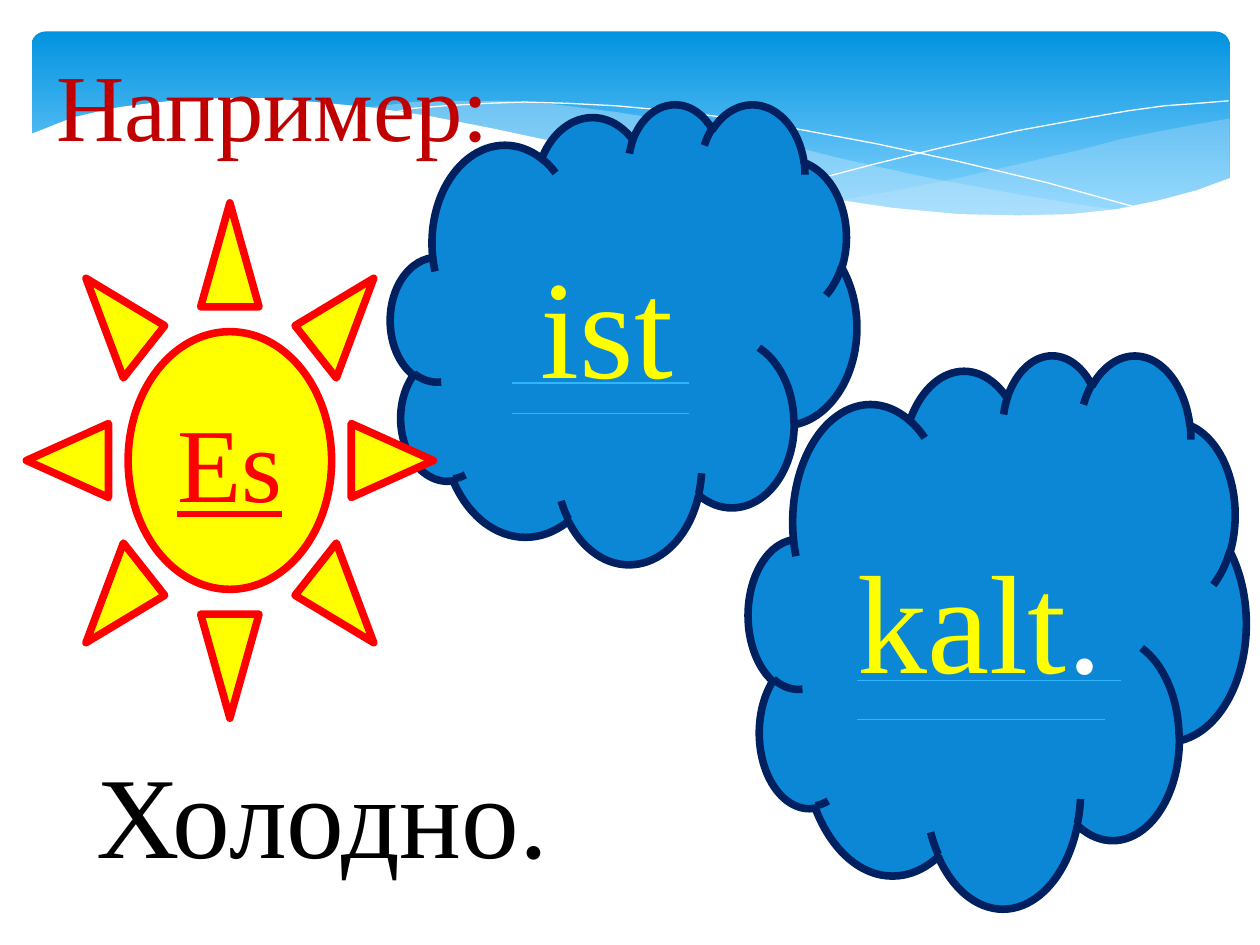
"""Build a German example slide with a sun, two clouds and a wavy blue banner."""
from lxml import etree
from pptx import Presentation
from pptx.dml.color import RGBColor
from pptx.enum.shapes import MSO_CONNECTOR as Connector, MSO_SHAPE as Shape
from pptx.oxml.ns import qn
from pptx.util import Inches, Pt

BANNER = {"at": (0.25, 0.25, 9.51, 1.56), "corner": 0.071, "angle": 270,
          "stops": [(0, "0293E0"), (0.9, "83D3FE")]}

WAVES = [
    {"fill": "C6E7FC", "alpha": 29, "points": [
        (9.76, 0.94), (9.48, 0.99), (9.21, 1.04), (8.91, 1.1), (8.61, 1.18),
        (8.05, 1.31), (7.53, 1.43), (7.06, 1.52), (6.61, 1.6), (6.91, 1.64),
        (7.19, 1.67), (7.45, 1.69), (7.81, 1.72), (8.14, 1.72), (8.44, 1.71),
        (8.72, 1.69), (8.97, 1.65), (9.21, 1.6), (9.49, 1.52), (9.76, 1.41)]},
    {"fill": "C6E7FC", "alpha": 40, "points": [
        (8.93, 1.67), (8.66, 1.64), (8.07, 1.54), (7.41, 1.42), (6.68, 1.26),
        (6.13, 1.12), (5.69, 1.02), (5.28, 0.95), (4.89, 0.89), (4.42, 0.83),
        (3.99, 0.8), (3.61, 0.8), (3.28, 0.81), (2.86, 0.86), (3.23, 0.9),
        (3.62, 0.97), (4.04, 1.06), (4.49, 1.16), (5.3, 1.35), (5.84, 1.46),
        (6.34, 1.56), (6.8, 1.63), (7.22, 1.68), (7.61, 1.71), (7.96, 1.73),
        (8.28, 1.73), (8.57, 1.71)]},
    {"line": "FFFFFF", "points": [
        (3.09, 0.9), (3.28, 0.86), (3.53, 0.84), (3.87, 0.82), (4.16, 0.81),
        (4.5, 0.82), (4.89, 0.84), (5.33, 0.88), (5.82, 0.94), (6.36, 1.03),
        (6.95, 1.14), (7.6, 1.28), (8.31, 1.45), (9.07, 1.66)]},
    {"line": "FFFFFF", "points": [
        (6.13, 1.51), (6.53, 1.41), (6.95, 1.3), (7.48, 1.17), (8.06, 1.04),
        (8.66, 0.93), (8.95, 0.88), (9.24, 0.84), (9.51, 0.82), (9.75, 0.8)]},
    {"fill": "FFFFFF", "alpha": 100, "points": [
        (9.77, 1.41), (9.5, 1.51), (9.2, 1.59), (8.87, 1.66), (8.5, 1.7),
        (8.09, 1.71), (7.61, 1.7), (7.08, 1.65), (6.48, 1.56), (5.79, 1.44),
        (5.03, 1.28), (4.47, 1.14), (3.91, 1.02), (3.4, 0.92), (2.92, 0.85),
        (2.5, 0.81), (2.11, 0.78), (1.77, 0.78), (1.46, 0.79), (1.19, 0.82),
        (0.95, 0.85), (0.76, 0.89), (0.59, 0.93), (0.46, 0.98), (0.36, 1.02),
        (0.23, 1.07), (0.23, 2.24), (9.77, 2.24)]},
]

CLOUDS = [
    ((3.1, 0.82, 3.7, 3.65), [("ist", "FFFF00")]),
    ((5.94, 2.81, 3.95, 4.39), [("kalt", "FFFF00"), (".", "FFFFFF")]),
]
SUN = ((0.21, 1.61, 3.23, 4.09), [("Es", "FF0000")])
CAPTIONS = [
    ((0.35, 0.32, 8.98, 1.01), [("Например:", "C00000")], 54),
    ((0.67, 5.85, 6.54, 1.21), [("Холодно.", "000000")], 66),
]
UNDERLINES = [(4.06, 5.47, 3.04), (4.06, 5.47, 3.28),
              (6.8, 8.9, 5.4), (6.8, 8.77, 5.71)]


def colour(value):
    return RGBColor.from_string(value)


def place(at):
    return [Inches(length) for length in at]


def paint(target, value):
    target.solid()
    target.fore_color.rgb = colour(value)


def write(shape, words, **formats):
    shape.text_frame.word_wrap = True
    para = shape.text_frame.paragraphs[0]
    for text, shade in words:
        span = para.add_run()
        span.text = text
        span.font.color.rgb = colour(shade)
        for name, value in {"name": "Times New Roman", **formats}.items():
            setattr(span.font, name, value)


def add_banner(slide):
    banner = slide.shapes.add_shape(Shape.ROUNDED_RECTANGLE, *place(BANNER["at"]))
    banner.shadow.inherit = False
    banner.adjustments[0] = BANNER["corner"]
    banner.line.fill.background()
    banner.fill.gradient()
    banner.fill.gradient_angle = BANNER["angle"]
    for stop, (position, shade) in zip(banner.fill.gradient_stops, BANNER["stops"]):
        stop.position = position
        stop.color.rgb = colour(shade)


def add_wave(slide, wave):
    start, *rest = [place(point) for point in wave["points"]]
    builder = slide.shapes.build_freeform(*start)
    builder.add_line_segments(rest, close="fill" in wave)
    shape = builder.convert_to_shape()
    shape.shadow.inherit = False
    if "fill" in wave:
        paint(shape.fill, wave["fill"])
        shape.line.fill.background()
        shade = shape.fill._xPr.find(".//" + qn("a:srgbClr"))
        etree.SubElement(shade, qn("a:alpha"), val=str(wave["alpha"] * 1000))
    else:
        shape.fill.background()
        paint(shape.line.fill, wave["line"])
        shape.line.width = Pt(0)


def add_figure(slide, kind, at, words, fill, line, **formats):
    figure = slide.shapes.add_shape(kind, *place(at))
    figure.shadow.inherit = False
    paint(figure.fill, fill)
    paint(figure.line.fill, line)
    figure.line.width = Pt(4.33)
    write(figure, words, **formats)


def add_underline(slide, left, right, top):
    line = slide.shapes.add_connector(Connector.STRAIGHT, *place((left, top, right, top)))
    paint(line.line.fill, "31B6FD")
    line.line.width = Pt(0.75)
    etree.SubElement(line._element.spPr, qn("a:effectLst"))


def main():
    deck = Presentation()
    deck.slide_width, deck.slide_height = place((10, 7.5))
    slide = deck.slides.add_slide(deck.slide_layouts[6])
    add_banner(slide)
    for wave in WAVES:
        add_wave(slide, wave)
    for at, words in CLOUDS:
        add_figure(slide, Shape.CLOUD, at, words, "0B87D6", "002060", size=Pt(80))
    for underline in UNDERLINES:
        add_underline(slide, *underline)
    add_figure(slide, Shape.SUN, *SUN, "FFFF00", "FF0000", size=Pt(60), underline=True)
    for at, words, size in CAPTIONS:
        write(slide.shapes.add_textbox(*place(at)), words, size=Pt(size))
    deck.save("out.pptx")


if __name__ == "__main__":
    main()
